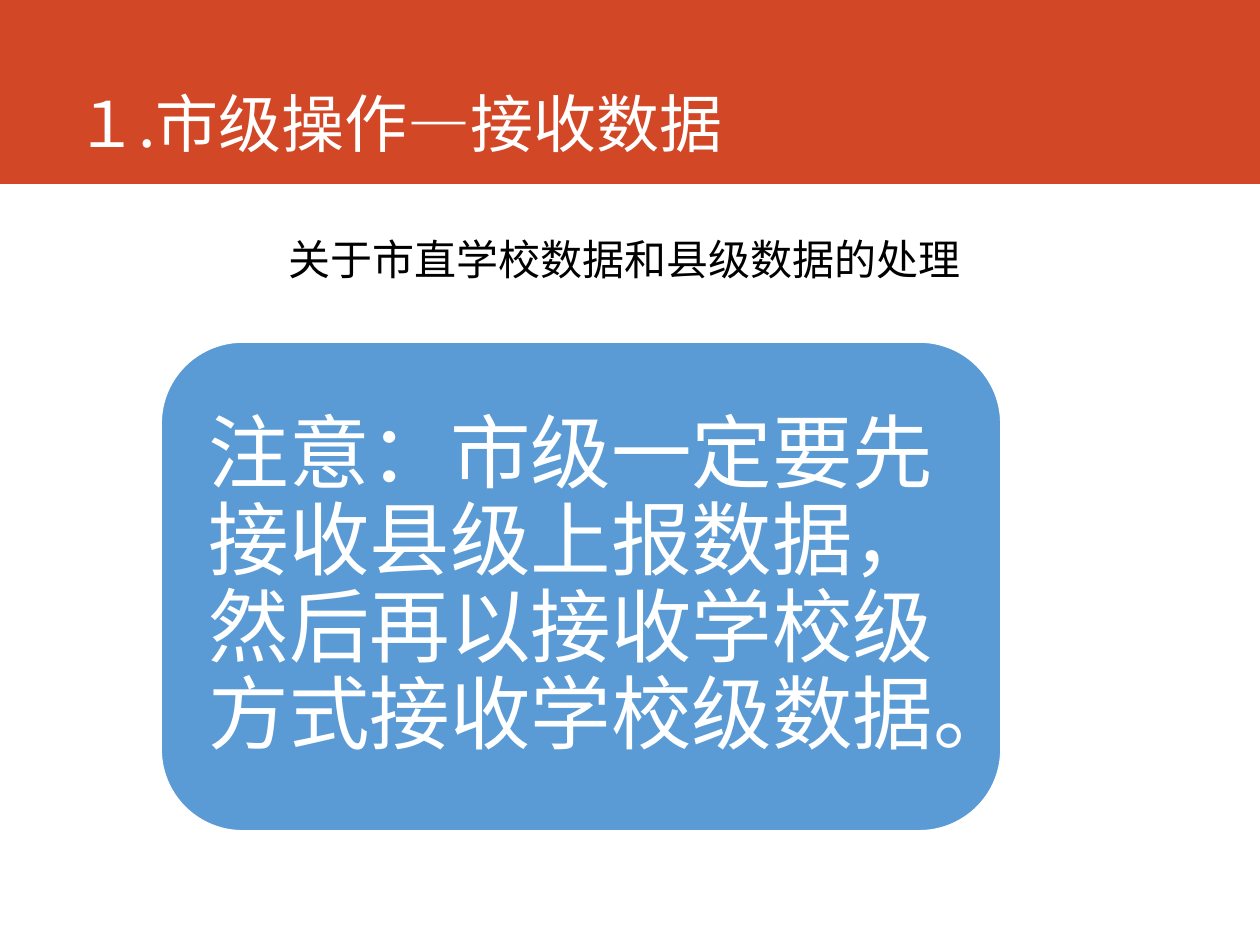
from pptx import Presentation
from pptx.dml.color import RGBColor
from pptx.enum.shapes import MSO_SHAPE as Shape
from pptx.enum.text import MSO_ANCHOR as Anchor, PP_ALIGN as Align
from pptx.util import Emu, Pt
from lxml import etree

RED = RGBColor(0xD2, 0x47, 0x26)
BLUE = RGBColor(0x5B, 0x9B, 0xD5)
WHITE = RGBColor(0xFF, 0xFF, 0xFF)
BLACK = RGBColor(0, 0, 0)
CJK = "Noto Sans CJK SC"
A = "{http://schemas.openxmlformats.org/drawingml/2006/main}"


def px(*nums):
    return [Emu(round(n * 914400 / 126)) for n in nums]


def add_text(box, words, size, lead, color, face, anchor, align, pad=None):
    """Add a wrapped text box; lead is the line pitch in points."""
    frame = slide.shapes.add_textbox(*px(*box)).text_frame
    frame.word_wrap = True
    frame.vertical_anchor = anchor
    if pad:
        frame.margin_left, frame.margin_right = px(pad, pad)
        frame.margin_top, frame.margin_bottom = px(pad, pad)
    para = frame.paragraphs[0]
    para.text = words
    para.alignment = align
    para.line_spacing = Pt(lead)
    font = para.font
    font.size, font.name = Pt(size), face
    font.color.rgb = color
    # East Asian glyphs take their face from a:ea
    props = para._p.pPr.find(A + "defRPr")
    etree.SubElement(props, A + "ea", typeface=CJK)


deck = Presentation()
deck.slide_width, deck.slide_height = px(1260, 945)
slide = deck.slides.add_slide(deck.slide_layouts[6])

band = slide.shapes.add_shape(Shape.RECTANGLE, *px(0, 0, 1260, 184))
band.shadow.inherit = False
band.fill.solid()
band.fill.fore_color.rgb = RED
band.line.fill.background()

add_text((63, 0, 1111, 166), "１.市级操作—接收数据", 36, 43,
         WHITE, CJK, Anchor.BOTTOM, Align.LEFT)
add_text((258, 227, 733, 63), "关于市直学校数据和县级数据的处理", 24, 29,
         BLACK, CJK, Anchor.TOP, Align.CENTER)

card = slide.shapes.add_shape(Shape.ROUNDED_RECTANGLE, *px(161, 342, 840, 489))
card.shadow.inherit = False
card.fill.solid()
card.fill.fore_color.rgb = BLUE
card.line.color.rgb = WHITE
card.line.width = Pt(1)

add_text((185, 365, 793, 442),
         "注意：市级一定要先接收县级上报数据，然后再以接收学校级方式接收学校级数据。",
         46, 49.7, WHITE, "Karla", Anchor.MIDDLE, Align.LEFT, pad=24)

deck.save("out.pptx")
